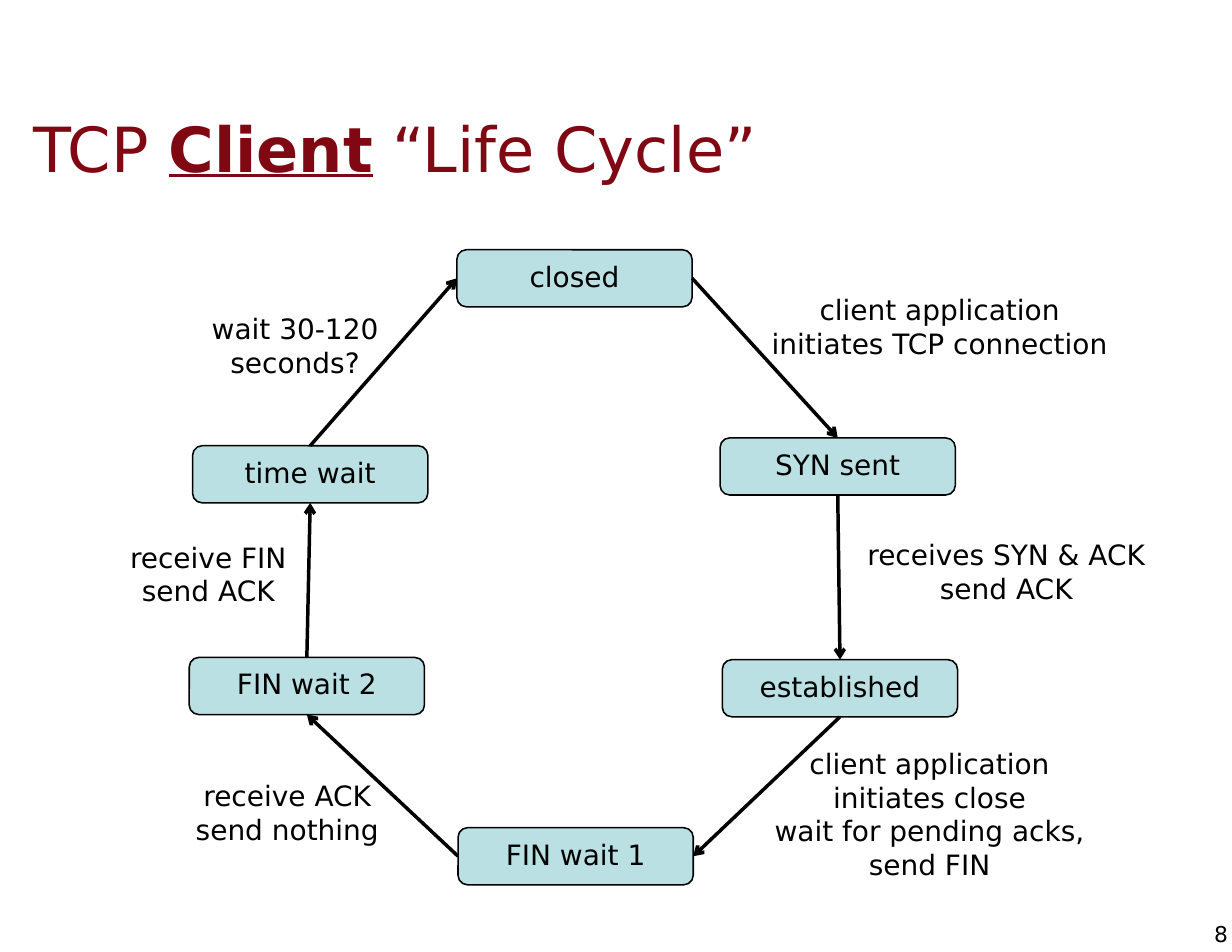
from dataclasses import dataclass
from lxml.etree import SubElement
from pptx import Presentation
from pptx.dml.color import RGBColor
from pptx.enum.shapes import MSO_CONNECTOR, MSO_SHAPE
from pptx.enum.text import MSO_ANCHOR, PP_ALIGN
from pptx.oxml.ns import qn
from pptx.util import Inches, Pt


@dataclass(frozen=True)
class Theme:
    font: str = "DejaVu Sans"
    ink: RGBColor = RGBColor(0x00, 0x00, 0x00)
    title: RGBColor = RGBColor(0x7F, 0x08, 0x13)
    fill: RGBColor = RGBColor(0xBB, 0xE0, 0xE3)
    head: int = 40
    body: int = 18
    small: int = 14
    edge: float = 1
    arrow: float = 2.25


THEME = Theme()

# Grid of 110 columns by 85 rows over the slide
COLS, ROWS = 110, 85
WIDE, HIGH = Inches(11), Inches(8.5)
NODE = (21, 5.1)    # state box: columns, rows
LINE = 3.03         # rows for one line of label text

# Connection sites of a rounded box
TOP, LEFT, BOTTOM, RIGHT = range(4)

# State: column and row of its top left corner
STATES = {
    "closed": (40.8, 22.3),
    "SYN sent": (64.3, 39.1),
    "established": (64.5, 58.9),
    "FIN wait 1": (40.9, 73.9),
    "FIN wait 2": (16.9, 58.7),
    "time wait": (17.2, 39.8),
}

# Sites where each arrow leaves and enters, in the order of STATES
SITES = [(RIGHT, TOP), (BOTTOM, TOP), (BOTTOM, RIGHT),
         (LEFT, BOTTOM), (TOP, BOTTOM), (TOP, LEFT)]

# Label: left, top, width, paragraphs of lines
LABELS = [
    (68.7, 26.1, 30.4, [["client application", "initiates TCP connection"]]),
    (77.2, 48, 25.3, [["receives SYN & ACK", "send ACK"]]),
    (66.2, 66.6, 33.6, [["client application", "initiates close",
                         "wait for pending acks,"], ["send FIN"]]),
    (17.4, 69.5, 16.5, [["receive ACK", "send nothing"]]),
    (11.4, 48.2, 14.4, [["receive FIN", "send ACK"]]),
    (18.7, 27.8, 15.3, [["wait 30-120", "seconds?"]]),
]


def place(col, row, cols, rows):
    """Turn grid units into slide lengths."""
    x, y = WIDE / COLS, HIGH / ROWS
    return [round(n) for n in (col * x, row * y, cols * x, rows * y)]


def add_run(para, text, size=THEME.body, color=THEME.ink, strong=False):
    run = para.add_run()
    run.text = text
    font = run.font
    font.name, font.size = THEME.font, Pt(size)
    font.color.rgb = color
    if strong:
        font.bold = font.underline = True


def set_frame(frame, side=0, edge=0, wrap=True):
    frame.word_wrap = wrap
    frame.vertical_anchor = MSO_ANCHOR.MIDDLE
    frame.margin_left = frame.margin_right = Inches(side)
    frame.margin_top = frame.margin_bottom = Inches(edge)


def add_title(slide, runs):
    box = slide.shapes.add_textbox(*place(1.9, 6.1, 93.5, 14.2))
    set_frame(box.text_frame, 0.11, 0.06)
    para = box.text_frame.paragraphs[0]
    for text, strong in runs:
        add_run(para, text, THEME.head, THEME.title, strong)


def add_number(slide, text):
    box = slide.shapes.add_textbox(*place(108.4, 82.2, 1.2, 2.4))
    set_frame(box.text_frame, wrap=False)
    para = box.text_frame.paragraphs[0]
    para.alignment = PP_ALIGN.RIGHT
    add_run(para, text, THEME.small)


def add_state(slide, text, col, row):
    box = slide.shapes.add_shape(
        MSO_SHAPE.ROUNDED_RECTANGLE, *place(col, row, *NODE))
    box.shadow.inherit = False
    box.fill.solid()
    box.fill.fore_color.rgb = THEME.fill
    box.line.color.rgb = THEME.ink
    box.line.width = Pt(THEME.edge)
    set_frame(box.text_frame)
    box.text_frame.margin_bottom = Inches(0.04)
    para = box.text_frame.paragraphs[0]
    para.alignment = PP_ALIGN.CENTER
    add_run(para, text)
    return box


def add_arrow(slide, start, end, sites):
    link = slide.shapes.add_connector(MSO_CONNECTOR.STRAIGHT, 0, 0, 0, 0)
    link.begin_connect(start, sites[0])
    link.end_connect(end, sites[1])
    link.line.color.rgb = THEME.ink
    link.line.width = Pt(THEME.arrow)
    SubElement(link.line._get_or_add_ln(), qn("a:tailEnd"), type="arrow")
    SubElement(link._element.spPr, qn("a:effectLst"))


def add_label(slide, col, row, cols, paras):
    rows = LINE * sum(len(lines) for lines in paras)
    box = slide.shapes.add_textbox(*place(col, row, cols, rows))
    frame = box.text_frame
    set_frame(frame, wrap=len(paras) > 1)
    for i, lines in enumerate(paras):
        para = frame.add_paragraph() if i else frame.paragraphs[0]
        para.alignment = PP_ALIGN.CENTER
        for j, text in enumerate(lines):
            if j:
                para.add_line_break()
            add_run(para, text)


def main():
    deck = Presentation()
    deck.slide_width, deck.slide_height = WIDE, HIGH
    slide = deck.slides.add_slide(deck.slide_layouts[6])

    # Title and page number
    add_title(slide, [("TCP ", False), ("Client", True),
                      (" “Life Cycle”", False)])
    add_number(slide, "8")

    # Ring of states, each joined to the next
    boxes = [add_state(slide, name, *spot) for name, spot in STATES.items()]
    for start, end, sites in zip(boxes, boxes[1:] + boxes[:1], SITES):
        add_arrow(slide, start, end, sites)

    # Events beside the arrows
    for label in LABELS:
        add_label(slide, *label)

    deck.save("out.pptx")


if __name__ == "__main__":
    main()
